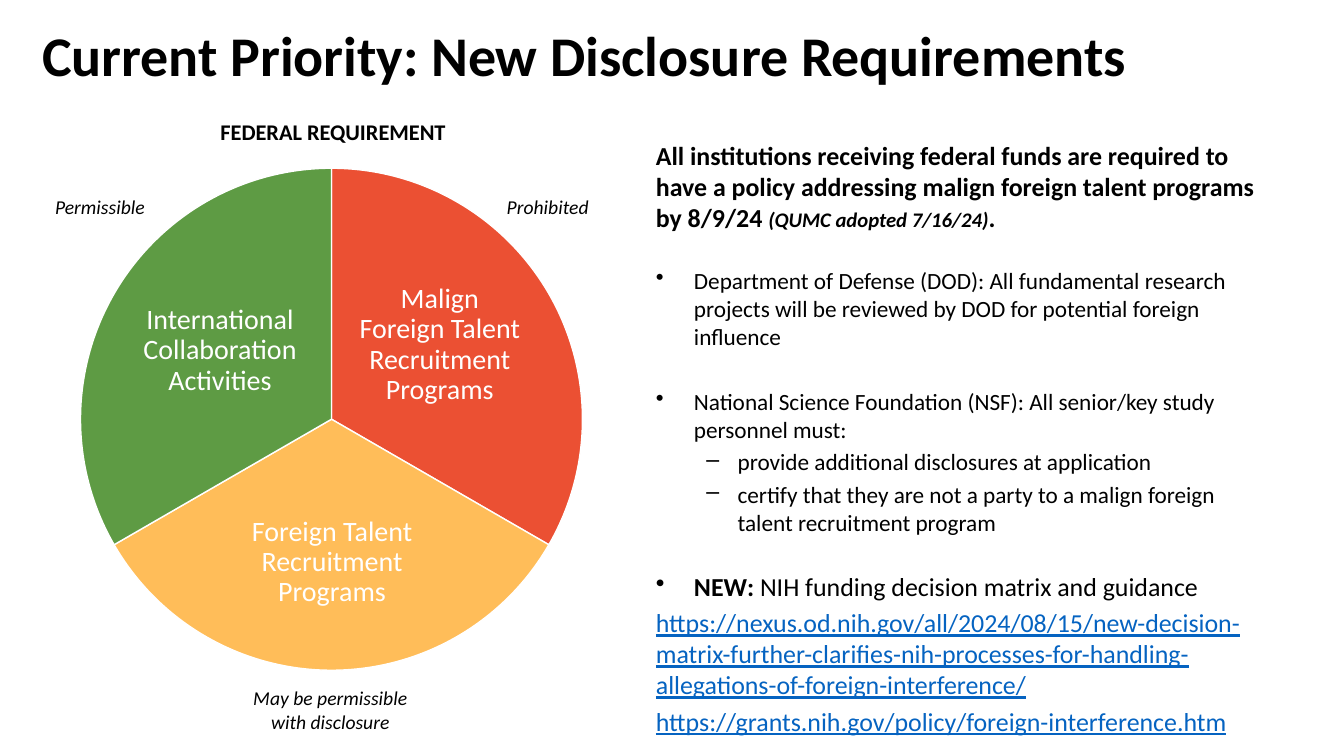
"""Build the slide on new disclosure requirements for foreign talent programs."""
import pptx
import pptx.dml.color
import pptx.enum.shapes
import pptx.enum.text
import pptx.util
import lxml.etree
from dataclasses import dataclass

Cm = pptx.util.Cm
Pt = pptx.util.Pt
ALIGN = pptx.enum.text.PP_ALIGN
ANCHOR = pptx.enum.text.MSO_ANCHOR


@dataclass(frozen=True)
class Theme:
    font: str = "Calibri"
    ink: str = "000000"
    paper: str = "FFFFFF"
    link: str = "0563C1"
    prohibited: str = "EB5033"
    disclosed: str = "FFBD59"
    permitted: str = "5E9B44"
    title: float = 40
    wedge: float = 20
    lead: float = 18.5
    heading: float = 16
    detail: float = 16.6
    aside: float = 14.8
    caption: float = 14


THEME = Theme()

TITLE = ("Current Priority: New Disclosure Requirements", (0.81, 0.46, 30.96, 2.01))
HEADING = ("FEDERAL REQUIREMENT", (4.04, 2.84, 8.71, 0.94))
PIE_BOX = (2.03, 4.24, 12.65, 12.65)
PIE_START = 270
WEDGES = [
    ("Malign Foreign Talent Recruitment Programs", THEME.prohibited, (8.94, 6.58, 4.29, 4.22)),
    ("Foreign Talent Recruitment Programs", THEME.disclosed, (5.51, 12.22, 5.72, 3.91)),
    ("International Collaboration Activities", THEME.permitted, (3.4, 6.73, 4.29, 4.22)),
]
CAPTIONS = [
    (["May be permissible", "with disclosure"], ALIGN.CENTER, (6.05, 17.17, 4.55, 1.45)),
    (["Prohibited"], ALIGN.LEFT, (12.52, 4.78, 2.59, 0.86)),
    (["Permissible"], ALIGN.LEFT, (1.14, 4.78, 2.9, 0.86)),
]

REQUIREMENTS_BOX = (16.28, 3.4, 15.9, 13.67)
KINDS = {
    "lead": dict(size=THEME.lead, bold=True),
    "agency": dict(size=THEME.detail, bullet="•", indent=(0.96, -0.96)),
    "duty": dict(size=THEME.detail, bullet="–", indent=(2.06, -0.79), level=1),
    "news": dict(size=THEME.lead, bullet="•", indent=(0.96, -0.96)),
    "link": dict(size=THEME.lead, color=THEME.link, underline=True),
}
REQUIREMENTS = [
    ("lead", 0, [
        ("All institutions receiving federal funds are required to have a policy "
         "addressing malign foreign talent programs by 8/9/24 ", {}),
        ("(QUMC adopted 7/16/24)", dict(size=Pt(THEME.aside), italic=True)),
        (".", {}),
    ]),
    ("agency", 23.6, [("Department of Defense (DOD): All fundamental research projects "
                       "will be reviewed by DOD for potential foreign influence", {})]),
    ("agency", 26.6, [("National Science Foundation (NSF): All senior/key study "
                       "personnel must:", {})]),
    ("duty", 3.3, [("provide additional disclosures at application", {})]),
    ("duty", 3.3, [("certify that they are not a party to a malign foreign talent "
                    "recruitment program", {})]),
    ("news", 24.7, [("NEW: ", dict(bold=True)),
                    ("NIH funding decision matrix and guidance", {})]),
    ("link", 3.7, [("https://nexus.od.nih.gov/all/2024/08/15/new-decision-matrix-further-"
                    "clarifies-nih-processes-for-handling-allegations-of-foreign-"
                    "interference/", {})]),
    ("link", 3.7, [("https://grants.nih.gov/policy/foreign-interference.htm", {})]),
]


def rgb(code):
    return pptx.dml.color.RGBColor.from_string(code)


def style(paragraph, size, color=THEME.ink, bold=False, italic=False, underline=False):
    font = paragraph.font
    font.name, font.size = THEME.font, Pt(size)
    font.bold, font.italic, font.underline = bold, italic, underline
    font.color.rgb = rgb(color)


def add_text(slide, box, lines, align=ALIGN.LEFT, anchor=ANCHOR.TOP, wrap=True,
             inset=None, spacing=None, **look):
    frame = slide.shapes.add_textbox(*map(Cm, box)).text_frame
    frame.word_wrap, frame.vertical_anchor = wrap, anchor
    if inset is not None:
        frame.margin_left = frame.margin_right = Cm(inset)
        frame.margin_top = frame.margin_bottom = Cm(inset)
    frame.text = "\n".join(lines)
    for paragraph in frame.paragraphs:
        paragraph.alignment = align
        paragraph.line_spacing = spacing
        style(paragraph, **look)


def set_bullet(paragraph, bullet, indent):
    properties = paragraph._p.get_or_add_pPr()
    properties.set("marL", str(Cm(indent[0])))
    properties.set("indent", str(Cm(indent[1])))
    mark = lxml.etree.Element(pptx.oxml.ns.qn("a:buChar"), char=bullet)
    properties.find(pptx.oxml.ns.qn("a:defRPr")).addprevious(mark)


def add_pie(slide):
    sweep = 360 / len(WEDGES)
    for index, (label, color, label_box) in enumerate(WEDGES):
        wedge = slide.shapes.add_shape(pptx.enum.shapes.MSO_SHAPE.PIE, *map(Cm, PIE_BOX))
        start = PIE_START + index * sweep
        for side, angle in enumerate((start, start + sweep)):
            wedge.adjustments[side] = angle % 360 * 0.6
        wedge.shadow.inherit = False
        wedge.fill.solid()
        wedge.fill.fore_color.rgb = rgb(color)
        wedge.line.color.rgb = rgb(THEME.paper)
        wedge.line.width = Pt(1)
        add_text(slide, label_box, [label], ALIGN.CENTER, ANCHOR.MIDDLE, inset=0.07,
                 spacing=0.9, size=THEME.wedge, color=THEME.paper)


def add_requirements(slide):
    frame = slide.shapes.add_textbox(*map(Cm, REQUIREMENTS_BOX)).text_frame
    frame.word_wrap = True
    for index, (kind, gap, pieces) in enumerate(REQUIREMENTS):
        paragraph = frame.add_paragraph() if index else frame.paragraphs[0]
        look = dict(KINDS[kind])
        bullet, indent = look.pop("bullet", None), look.pop("indent", None)
        paragraph.level = look.pop("level", 0)
        paragraph.space_before = Pt(gap)
        style(paragraph, **look)
        if bullet:
            set_bullet(paragraph, bullet, indent)
        for wording, emphasis in pieces:
            run = paragraph.add_run()
            run.text = wording
            for trait, value in emphasis.items():
                setattr(run.font, trait, value)


def main():
    deck = pptx.Presentation()
    deck.slide_width, deck.slide_height = Cm(33.87), Cm(19.05)
    slide = deck.slides.add_slide(deck.slide_layouts[6])
    add_pie(slide)
    title, title_box = TITLE
    add_text(slide, title_box, [title], anchor=ANCHOR.MIDDLE, spacing=0.9,
             size=THEME.title, bold=True)
    add_requirements(slide)
    heading, heading_box = HEADING
    add_text(slide, heading_box, [heading], ALIGN.CENTER, size=THEME.heading, bold=True)
    for lines, align, box in CAPTIONS:
        add_text(slide, box, lines, align, wrap=False, size=THEME.caption, italic=True)
    deck.save("out.pptx")


if __name__ == "__main__":
    main()
